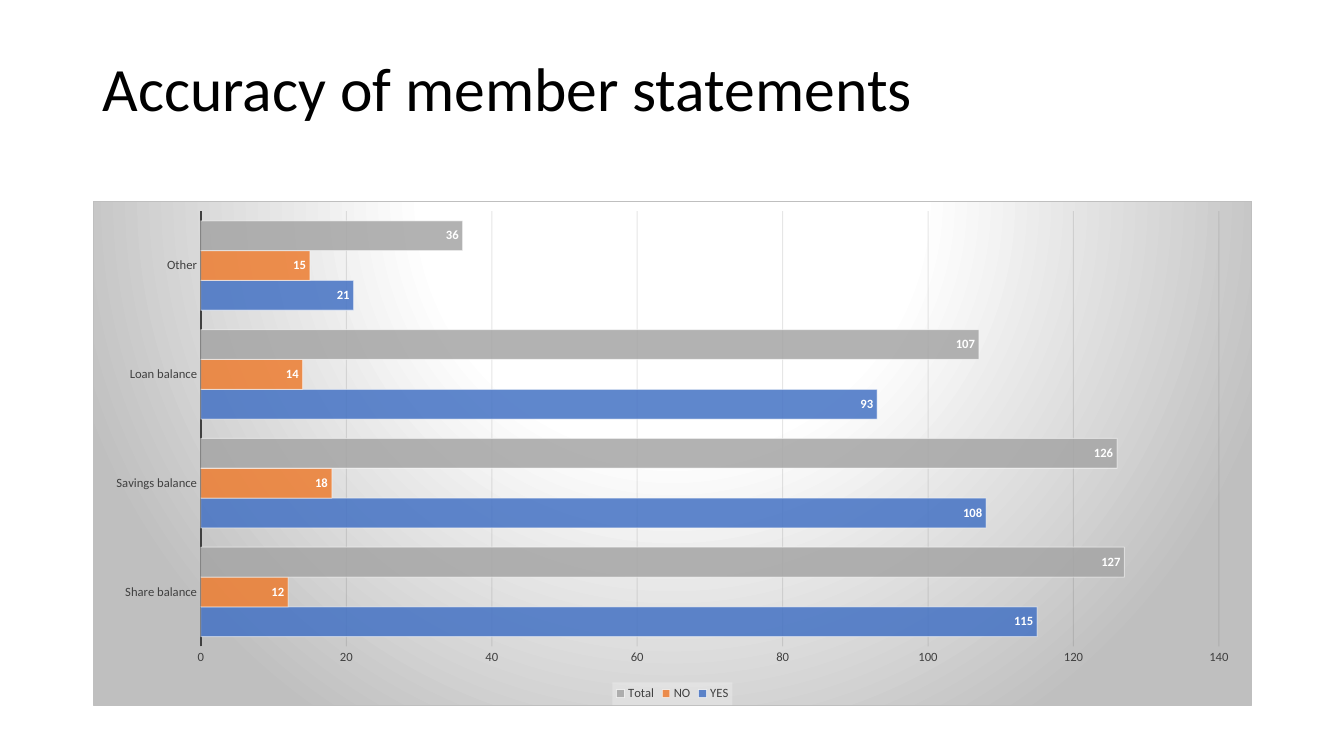
"""Build the slide on the accuracy of member statements."""
import dataclasses
import typing

import lxml.etree
import pptx
import pptx.chart.chart
import pptx.chart.data
import pptx.dml.color
import pptx.enum.chart
import pptx.enum.text
import pptx.oxml
import pptx.oxml.ns
import pptx.slide
import pptx.util

RGBColor = pptx.dml.color.RGBColor
Inches = pptx.util.Inches
Pt = pptx.util.Pt
qn = pptx.oxml.ns.qn

BLACK = RGBColor(0x00, 0x00, 0x00)
WHITE = RGBColor(0xFF, 0xFF, 0xFF)
CHARCOAL = RGBColor(0x40, 0x40, 0x40)
GRID = RGBColor(0x0D, 0x0D, 0x0D)
SILVER = RGBColor(0xBF, 0xBF, 0xBF)
PALE = RGBColor(0xF2, 0xF2, 0xF2)
BLUE = RGBColor(0x44, 0x72, 0xC4)
ORANGE = RGBColor(0xED, 0x7D, 0x31)
GRAY = RGBColor(0xA5, 0xA5, 0xA5)

TITLE_FONT = {"name": "Calibri", "size": Pt(44)}
CHART_FONT = {"name": "Calibri", "size": Pt(10)}
SMALL_FONT = {"name": "Calibri", "size": Pt(9)}
BOLD_FONT = {**SMALL_FONT, "bold": True}
LEFT, WIDTH = Inches(0.92), Inches(11.5)


@dataclasses.dataclass(frozen=True)
class Answer:
    """One series of replies."""

    name: str
    counts: tuple[int, ...]
    color: RGBColor


BALANCES = ("Share balance", "Savings balance", "Loan balance", "Other")
ANSWERS = (
    Answer("YES", (115, 108, 93, 21), BLUE),
    Answer("NO", (12, 18, 14, 15), ORANGE),
    Answer("Total", (127, 126, 107, 36), GRAY),
)


def apply(target: typing.Any, values: dict[str, typing.Any]) -> None:
    """Set each named attribute of the target."""
    for name, value in values.items():
        setattr(target, name, value)


def style_font(font: typing.Any, values: dict[str, typing.Any], color: RGBColor) -> None:
    """Give a font its face, size and colour."""
    apply(font, values)
    font.color.rgb = color


def style_line(line: typing.Any, color: RGBColor, width: float) -> None:
    """Give a line its colour and width in points."""
    line.color.rgb = color
    line.width = Pt(width)


def set_opacity(parent: typing.Any, route: str, percent: int) -> None:
    """Set the opacity of the solid colour found along the route."""
    steps = [qn(step) for step in (*route.split(), "a:solidFill", "a:srgbClr")]
    color = parent.find("/".join(steps))
    lxml.etree.SubElement(color, qn("a:alpha")).set("val", str(percent * 1000))


def shape_properties(content: str) -> typing.Any:
    """Make chart shape properties from drawing markup."""
    return pptx.oxml.parse_xml(
        f'<c:spPr {pptx.oxml.ns.nsdecls("c", "a")}>{content}</c:spPr>'
    )


def add_title(page: pptx.slide.Slide) -> None:
    """Write the slide title."""
    box = page.shapes.add_textbox(LEFT, Inches(0.4), WIDTH, Inches(1.02))
    apply(box.text_frame, {
        "word_wrap": True,
        "vertical_anchor": pptx.enum.text.MSO_ANCHOR.MIDDLE,
    })
    para = box.text_frame.paragraphs[0]
    para.line_spacing = 0.9
    span = para.add_run()
    span.text = "Accuracy of member statements"
    style_font(span.font, TITLE_FONT, BLACK)


def style_axes(chart: pptx.chart.chart.Chart) -> None:
    """Format both axes and the gridlines."""
    no_tick = pptx.enum.chart.XL_TICK_MARK.NONE
    for axis in (chart.category_axis, chart.value_axis):
        apply(axis, {"major_tick_mark": no_tick, "minor_tick_mark": no_tick})
        style_font(axis.tick_labels.font, SMALL_FONT, CHARCOAL)
    style_line(chart.category_axis.format.line, CHARCOAL, 1.5)
    scale = chart.value_axis
    apply(scale, {"minimum_scale": 0, "maximum_scale": 140, "major_unit": 20,
                  "has_major_gridlines": True})
    scale.format.line.fill.background()
    style_line(scale.major_gridlines.format.line, GRID, 0.75)
    set_opacity(chart.element, ".//c:majorGridlines c:spPr a:ln".replace(".//c:", "c:chart c:plotArea c:valAx c:"), 10)


def style_bars(chart: pptx.chart.chart.Chart) -> None:
    """Format the bars and their value labels."""
    plot = chart.plots[0]
    apply(plot, {"gap_width": 65, "overlap": 0, "vary_by_categories": False})
    for series, answer in zip(plot.series, ANSWERS):
        series.format.fill.solid()
        series.format.fill.fore_color.rgb = answer.color
        style_line(series.format.line, WHITE, 0.75)
        set_opacity(series._element, "c:spPr", 85)
        set_opacity(series._element, "c:spPr a:ln", 50)
        labels = series.data_labels
        apply(labels, {
            "show_value": True,
            "position": pptx.enum.chart.XL_LABEL_POSITION.INSIDE_END,
        })
        style_font(labels.font, BOLD_FONT, WHITE)


def style_legend(chart: pptx.chart.chart.Chart) -> None:
    """Place the legend on a pale panel at the bottom."""
    chart.has_legend = True
    legend = chart.legend
    apply(legend, {
        "position": pptx.enum.chart.XL_LEGEND_POSITION.BOTTOM,
        "include_in_layout": False,
    })
    style_font(legend.font, SMALL_FONT, CHARCOAL)
    panel = shape_properties(
        f'<a:solidFill><a:srgbClr val="{PALE}"><a:alpha val="39000"/>'
        "</a:srgbClr></a:solidFill><a:ln><a:noFill/></a:ln>"
    )
    legend._element.find(qn("c:txPr")).addprevious(panel)


def style_background(chart: pptx.chart.chart.Chart) -> None:
    """Lay a circular gradient and a thin border behind the chart."""
    stops = "".join(
        f'<a:gs pos="{place * 1000}"><a:srgbClr val="{color}"/></a:gs>'
        for place, color in ((0, WHITE), (39, WHITE), (100, SILVER))
    )
    background = shape_properties(
        f'<a:gradFill><a:gsLst>{stops}</a:gsLst><a:path path="circle">'
        '<a:fillToRect l="50000" t="-80000" r="50000" b="180000"/></a:path>'
        f'</a:gradFill><a:ln w="{Pt(0.75)}"><a:solidFill>'
        f'<a:srgbClr val="{SILVER}"/></a:solidFill></a:ln>'
    )
    chart.element.find(qn("c:chart")).addnext(background)


def add_balance_chart(page: pptx.slide.Slide) -> None:
    """Add the bar chart of replies by balance."""
    data = pptx.chart.data.CategoryChartData()
    data.categories = BALANCES
    for answer in ANSWERS:
        data.add_series(answer.name, answer.counts)
    chart = page.shapes.add_chart(
        pptx.enum.chart.XL_CHART_TYPE.BAR_CLUSTERED,
        LEFT, Inches(1.99), WIDTH, Inches(5.01), data,
    ).chart
    chart.has_title = False
    style_font(chart.font, CHART_FONT, BLACK)
    style_axes(chart)
    style_bars(chart)
    style_legend(chart)
    style_background(chart)


def main() -> None:
    """Create and save the deck."""
    deck = pptx.Presentation()
    apply(deck, {"slide_width": Inches(13.33), "slide_height": Inches(7.5)})
    page = deck.slides.add_slide(deck.slide_layouts[6])
    add_title(page)
    add_balance_chart(page)
    deck.save("out.pptx")


if __name__ == "__main__":
    main()
